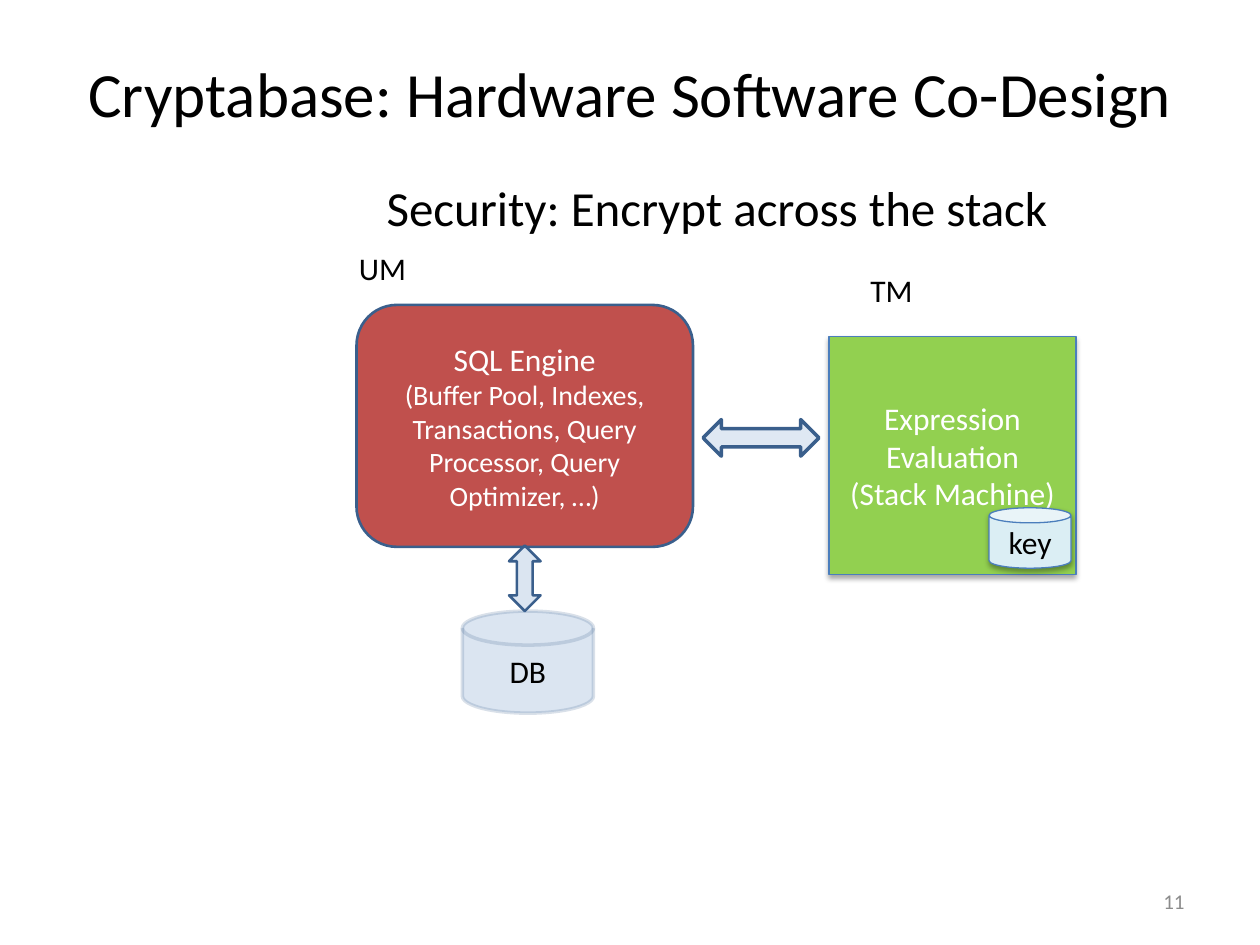
"""Build the hardware and software co-design slide."""
from lxml.etree import SubElement
from pptx import Presentation
from pptx.dml.color import RGBColor
from pptx.enum.shapes import MSO_SHAPE as SHAPE
from pptx.enum.text import MSO_ANCHOR as ANCHOR, MSO_AUTO_SIZE as AUTO, PP_ALIGN as ALIGN
from pptx.oxml.ns import qn
from pptx.util import Inches, Pt

COLORS = {
    "black": "000000", "white": "FFFFFF", "gray": "8C8C8C", "red": "C0504D",
    "green": "92D050", "blue": "4F81BD", "ice": "DBEEF4",
    "edge": "3A5F8C", "thin_edge": "4B7EBC",
}


def write(tf, lines, color="black", align=ALIGN.CENTER, anchor=ANCHOR.MIDDLE):
    tf.vertical_anchor = anchor
    for i, (text, size) in enumerate(lines):
        p = tf.add_paragraph() if i else tf.paragraphs[0]
        p.alignment = align
        r = p.add_run()
        r.text = text
        r.font.name = "Calibri"
        r.font.size = Pt(size)
        r.font.color.rgb = RGBColor.from_string(COLORS[color])


def set_alpha(fill, percent):
    color = fill._xPr.find(qn("a:solidFill"))[0]
    SubElement(color, qn("a:alpha"), val=str(percent * 1000))


prs = Presentation()
prs.slide_width, prs.slide_height = Inches(10), Inches(7.5)
s = prs.slides.add_slide(prs.slide_layouts[5])

title = s.shapes.title
title.left, title.top, title.width, title.height = map(Inches, (0.5, 0.22, 9, 1.03))
title.text_frame.auto_size = AUTO.NONE
write(title.text_frame, [("Cryptabase: Hardware Software Co-Design", 36)])

server_text = [
    ("SQL Engine", 18),
    ("(Buffer Pool, Indexes, Transactions, Query Processor, Query Optimizer, …)", 16),
]
machine_text = [("Expression Evaluation", 18), ("(Stack Machine)", 18)]
shapes = [
    (SHAPE.ROUNDED_RECTANGLE, (2.83, 2.42, 2.67, 1.92), "red", 100, "edge", 1.5, 100, False, server_text, "white"),
    (SHAPE.UP_DOWN_ARROW, (4.04, 4.33, 0.25, 0.52), "blue", 20, "edge", 1.5, 100, False, [], "black"),
    (SHAPE.FLOWCHART_MAGNETIC_DISK, (3.67, 4.85, 1.04, 0.81), "blue", 20, "edge", 2, 19, False, [("DB", 18)], "black"),
    (SHAPE.LEFT_RIGHT_ARROW, (5.58, 3.33, 0.92, 0.29), "blue", 18, "edge", 2, 100, False, [], "black"),
    (SHAPE.RECTANGLE, (6.58, 2.67, 1.96, 1.89), "green", 100, "thin_edge", 0.75, 100, True, machine_text, "white"),
    (SHAPE.CAN, (7.85, 4.03, 0.65, 0.48), "ice", 100, "thin_edge", 0.75, 100, True, [("key", 18)], "black"),
]
for kind, box, fill, fill_alpha, edge, width, edge_alpha, shadow, lines, color in shapes:
    sp = s.shapes.add_shape(kind, *map(Inches, box))
    sp.fill.solid()
    sp.fill.fore_color.rgb = RGBColor.from_string(COLORS[fill])
    sp.line.color.rgb = RGBColor.from_string(COLORS[edge])
    sp.line.width = Pt(width)
    sp.shadow.inherit = False
    if fill_alpha < 100:
        set_alpha(sp.fill, fill_alpha)
    if edge_alpha < 100:
        set_alpha(sp.line.fill, edge_alpha)
    if shadow:
        effects = sp._element.spPr.find(qn("a:effectLst"))
        outer = SubElement(effects, qn("a:outerShdw"), blurRad=str(Pt(3.1)),
                           dist=str(Pt(1.8)), dir="5400000", rotWithShape="0")
        shade = SubElement(outer, qn("a:srgbClr"), val=COLORS["black"])
        SubElement(shade, qn("a:alpha"), val="35000")
    write(sp.text_frame, lines, color)

labels = [
    ("UM", 18, (2.75, 1.93, 0.58, 0.4)),
    ("TM", 18, (6.81, 2.1, 0.6, 0.4)),
    ("Security: Encrypt across the stack", 28, (2.97, 1.36, 5.51, 0.57)),
]
for text, size, box in labels:
    tf = s.shapes.add_textbox(*map(Inches, box)).text_frame
    tf.word_wrap = False
    tf.auto_size = AUTO.SHAPE_TO_FIT_TEXT
    write(tf, [(text, size)], align=ALIGN.LEFT, anchor=ANCHOR.TOP)

number = s.shapes.add_textbox(*map(Inches, (7.17, 6.95, 2.33, 0.4)))
number.text_frame.word_wrap = True
write(number.text_frame, [("11", 12)], "gray", ALIGN.RIGHT)

prs.save("out.pptx")
